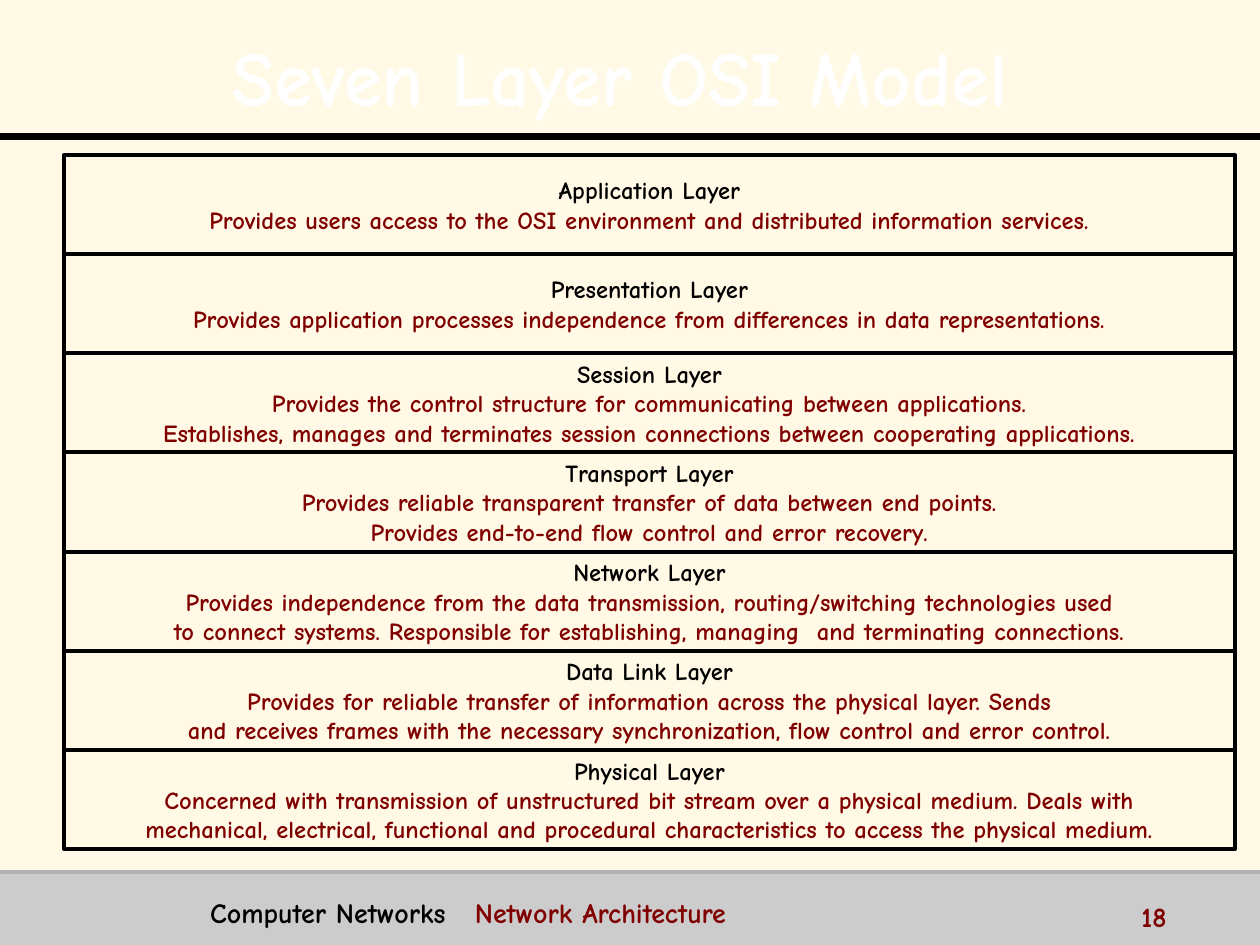
import pptx
import pptx.dml.color
import pptx.enum.shapes
import pptx.enum.text
import pptx.oxml
import pptx.oxml.ns
import pptx.util
from pptx.util import Inches

RGBColor = pptx.dml.color.RGBColor
ALIGN = pptx.enum.text.PP_ALIGN
ANCHOR = pptx.enum.text.MSO_ANCHOR

CREAM = RGBColor(0xFF, 0xF9, 0xE6)
BLACK = RGBColor(0x00, 0x00, 0x00)
WHITE = RGBColor(0xFF, 0xFF, 0xFF)
MAROON = RGBColor(0x80, 0x00, 0x00)
FOOTER_GRAY = RGBColor(0xCC, 0xCC, 0xCC)
RULE_GRAY = RGBColor(0xB2, 0xB2, 0xB2)
FONT = "Comic Neue"
DRAWING = pptx.oxml.ns.nsdecls("a")

STACK_TOP, STACK_HEIGHT = 1.23, 5.51
LAYERS = [
    ("Application Layer",
     "Provides users access to the OSI environment and distributed information services."),
    ("Presentation Layer",
     "Provides application processes independence from differences in data representations."),
    ("Session Layer",
     "Provides the control structure for communicating between applications.",
     "Establishes, manages and terminates session connections between cooperating applications."),
    ("Transport Layer",
     "Provides reliable transparent transfer of data between end points.",
     "Provides end-to-end flow control and error recovery."),
    ("Network Layer",
     "Provides independence from the data transmission, routing/switching technologies used",
     "to connect systems. Responsible for establishing, managing  and terminating connections."),
    ("Data Link Layer",
     "Provides for reliable transfer of information across the physical layer. Sends",
     "and receives frames with the necessary synchronization, flow control and error control."),
    ("Physical Layer",
     "Concerned with transmission of unstructured bit stream over a physical medium. Deals with",
     "mechanical, electrical, functional and procedural characteristics to access the physical medium."),
]


def add_span(para, text, size=14, color=BLACK):
    span = para.add_run()
    span.text = text
    span.font.size = pptx.util.Pt(size)
    span.font.bold = True
    span.font.name = FONT
    span.font.color.rgb = color
    return span


def add_text_box(page, left, top, width, height, anchor=ANCHOR.TOP):
    """Add a wrapping text box and return its frame."""
    box = page.shapes.add_textbox(Inches(left), Inches(top), Inches(width), Inches(height))
    box.text_frame.word_wrap = True
    box.text_frame.vertical_anchor = anchor
    return box.text_frame


def add_rectangle(page, left, top, width, height):
    """Add a rectangle without fill, line or shadow."""
    box = page.shapes.add_shape(pptx.enum.shapes.MSO_SHAPE.RECTANGLE, Inches(left),
                                Inches(top), Inches(width), Inches(height))
    box.shadow.inherit = False
    box.fill.background()
    box.line.fill.background()
    return box


def add_rule(page, top, color, weight):
    """Draw a line across the full width of the page."""
    rule = page.shapes.add_connector(pptx.enum.shapes.MSO_CONNECTOR.STRAIGHT,
                                     0, Inches(top), Inches(10), Inches(top))
    rule.line.color.rgb = color
    rule.line.width = pptx.util.Pt(weight)
    rule._element.spPr.append(pptx.oxml.parse_xml(f"<a:effectLst {DRAWING}/>"))


def add_text_shadow(span):
    shadow = pptx.oxml.parse_xml(
        f'<a:effectLst {DRAWING}><a:outerShdw dist="35921" dir="2700000">'
        '<a:srgbClr val="000000"/></a:outerShdw></a:effectLst>')
    fill = span.font._element.find(pptx.oxml.ns.qn("a:solidFill"))
    fill.addnext(shadow)


def add_title(page, text):
    para = add_text_box(page, 0.12, 0.13, 9.61, 0.87, ANCHOR.MIDDLE).paragraphs[0]
    para.alignment = ALIGN.CENTER
    para.line_spacing = 1.1
    add_text_shadow(add_span(para, text, size=44, color=WHITE))


def add_layer(page, top, height, lines):
    """Draw one outlined layer: a black name over maroon description lines."""
    box = add_rectangle(page, 0.51, top, 9.29, height)
    box.line.color.rgb = BLACK
    box.line.width = pptx.util.Pt(2.25)
    frame = box.text_frame
    frame.word_wrap = False
    frame.vertical_anchor = ANCHOR.MIDDLE
    for index, line in enumerate(lines):
        para = frame.add_paragraph() if index else frame.paragraphs[0]
        para.alignment = ALIGN.CENTER
        add_span(para, line, color=MAROON if index else BLACK)


def add_footer(page):
    number = add_text_box(page, 8.96, 7.09, 1, 0.25).paragraphs[0]
    add_span(number, "18", size=16, color=MAROON)

    para = add_text_box(page, 1.57, 7.06, 7.12, 0.31).paragraphs[0]
    para._p.get_or_add_pPr().append(pptx.oxml.parse_xml(
        f'<a:tabLst {DRAWING}><a:tab pos="{Inches(2.1)}" algn="l"/></a:tabLst>'))
    add_span(para, "Computer Networks\t", size=16)
    add_span(para, "Network Architecture", size=16, color=MAROON)


def main():
    deck = pptx.Presentation()
    deck.slide_width, deck.slide_height = Inches(10), Inches(7.5)
    page = deck.slides.add_slide(deck.slide_layouts[6])
    page.background.fill.solid()
    page.background.fill.fore_color.rgb = CREAM

    band = add_rectangle(page, 0, 6.92, 10, 0.58)
    band.fill.solid()
    band.fill.fore_color.rgb = FOOTER_GRAY
    add_rule(page, 1.08, BLACK, 4)
    add_rule(page, 6.92, RULE_GRAY, 2)

    add_title(page, "Seven Layer OSI Model")
    height = STACK_HEIGHT / len(LAYERS)
    for index, lines in enumerate(LAYERS):
        add_layer(page, STACK_TOP + index * height, height, lines)
    add_footer(page)
    deck.save("out.pptx")


if __name__ == "__main__":
    main()
